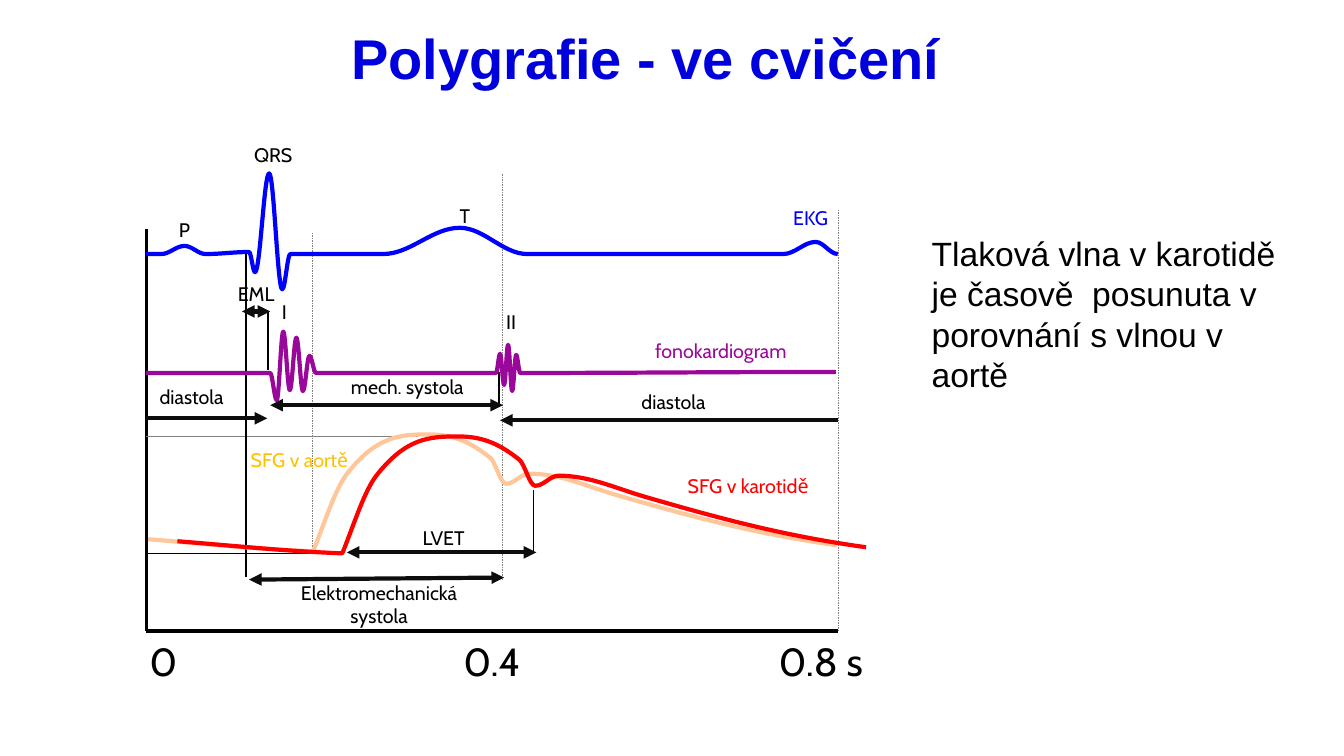
from itertools import accumulate, repeat

from lxml import etree
from pptx import Presentation, util as u
from pptx.dml.color import RGBColor
from pptx.enum import dml, shapes, text
from pptx.oxml.ns import qn

BLACK, ARROW, GREY = "000000", "0D0D0D", "808080"
BLUE, PURPLE, RED = "0000FF", "9A089A", "FF0000"
PEACH, GOLD, NAVY = "FFC799", "FFC000", "0000DC"

LEFT, RIGHT = 1.45, 8.31            # ends of the time axis
FLOOR = 6.26                        # height of the time axis
ECG_BASE, SOUND_BASE = 2.52, 3.7    # resting level of each trace
REACH = 0.36                        # share of a step covered by a curve handle
DELAY, DROP = 0.29, 0.02            # carotid pulse against aortic pulse


def paint(value):
    return RGBColor.from_string(value)


def put(item, values):
    for name, value in values.items():
        setattr(item, name, value)


def wave(start, top, end, rise):
    """Turning points of one rounded wave above the ECG base line."""
    return [(start, ECG_BASE), (top, ECG_BASE - rise), (end, ECG_BASE)]


def sound(start, step, swings):
    """Turning points of a heart sound: equal steps, one swing at each."""
    times = accumulate(repeat(step, len(swings)), initial=start)
    return [(x, SOUND_BASE + swing) for x, swing in zip(times, [0, *swings])]


def ecg():
    p_wave = wave(1.6, 1.83, 2.04, 0.08)
    q, r, s = (2.53, 2.7), (2.67, 1.72), (2.8, 2.87)
    t_wave = wave(3.8, 4.56, 5.23, 0.26)
    next_p = wave(7.77, 8.09, RIGHT, 0.12)
    return [(LEFT, ECG_BASE), *p_wave, (2.47, 2.5), q, r, s, (2.88, ECG_BASE),
            *t_wave, *next_p]


def phono():
    first = sound(2.68, 0.065, [0.27, -0.41, 0.17, -0.35, 0.18, -0.17, 0])
    second = sound(4.92, 0.04, [-0.19, 0.12, -0.28, 0.18, -0.18, 0])
    return [(LEFT, SOUND_BASE), *first, *second, (RIGHT - 0.02, SOUND_BASE - 0.01)]


def pulse(dx=0, dy=0):
    """Points of a pressure pulse, as x, y and slope."""
    phases = {
        "diastole": (1.47, 5.35, 0.08),
        "foot": (3.1, 5.47, 0.04),
        "upstroke": (3.11, 5.46, -2.5),
        "rise": (3.45, 4.69, -1.25),
        "peak": (4.25, 4.31, 0),
        "fall": (4.86, 4.54, 0.8),
        "notch": (5.02, 4.8, 0),
        "rebound": (5.25, 4.7, 0),
        "runoff": (6.11, 4.91, 0.29),
        "end": (8.3, 5.41, 0.14),
    }
    return [(x + dx, y + dy, slope) for x, y, slope in phases.values()]


class Chart:
    def __init__(self, slide):
        self.slide = slide
        self.font = "Cabin"

    def stroke(self, line, color, width):
        line.color.rgb = paint(color)
        line.width = u.Pt(width)

    def rule(self, x1, y1, x2, y2, color=BLACK, width=1.0, dash=False, ends=()):
        rule = self.slide.shapes.add_connector(
            shapes.MSO_CONNECTOR.STRAIGHT, *map(u.Inches, (x1, y1, x2, y2)))
        self.stroke(rule.line, color, width)
        if dash:
            rule.line.dash_style = dml.MSO_LINE.DASH
        props = rule._element.spPr
        for end in ends:
            etree.SubElement(props.find(qn("a:ln")), qn(f"a:{end}End"), type="triangle")
        etree.SubElement(props, qn("a:effectLst"))

    def arrow(self, x1, y1, x2, y2, ends=("head", "tail")):
        self.rule(x1, y1, x2, y2, ARROW, 3, ends=ends)

    def curve(self, points, color):
        """Join points by smooth cubics; a point without a slope is level."""
        knots = [(*point, 0)[:3] for point in points]
        stops = []
        for (x1, y1, m1), (x2, y2, m2) in zip(knots, knots[1:]):
            reach = (x2 - x1) * REACH
            stops += [(x1 + reach, y1 + m1 * reach),
                      (x2 - reach, y2 - m2 * reach), (x2, y2)]
        mils = [(x * 1000, y * 1000) for x, y in [knots[0][:2], *stops]]
        form = self.slide.shapes.build_freeform(*mils[0], scale=u.Inches(1) / 1000)
        form.add_line_segments(mils[1:], close=False)
        trace = form.convert_to_shape()
        trace.shadow.inherit = False
        trace.fill.background()
        self.stroke(trace.line, color, 3)
        self.bend(trace._element.find(".//" + qn("a:path")))

    def bend(self, track):
        """Turn each three straight steps into one cubic."""
        steps = track.findall(qn("a:lnTo"))
        for i in range(0, len(steps), 3):
            cubic = etree.SubElement(track, qn("a:cubicBezTo"))
            for step in steps[i:i + 3]:
                cubic.append(step[0])
                track.remove(step)

    def label(self, words, mid, top, color=BLACK, width=0.92, size=14, height=0.34):
        """Write words centred on mid."""
        area = (mid - width / 2, top, width, height)
        box = self.slide.shapes.add_textbox(*map(u.Inches, area))
        put(box.text_frame, {"word_wrap": True, "text": words,
                             "auto_size": text.MSO_AUTO_SIZE.SHAPE_TO_FIT_TEXT})
        para = box.text_frame.paragraphs[0]
        para.alignment = text.PP_ALIGN.CENTER
        put(para.font, {"name": self.font, "size": u.Pt(size)})
        para.font.color.rgb = paint(color)

    def holder(self, item, words, area, color, font, layout):
        """Move, fill and format a template placeholder."""
        put(item, dict(zip(("left", "top", "width", "height"), map(u.Inches, area))))
        frame = item.text_frame
        put(frame, {"text": words, "word_wrap": True,
                    "vertical_anchor": text.MSO_ANCHOR.TOP,
                    "auto_size": text.MSO_AUTO_SIZE.NONE})
        put(frame, {f"margin_{side}": 0 for side in ("left", "top", "right", "bottom")})
        para = frame.paragraphs[0]
        put(para, layout)
        put(para.font, {"name": "Arial", **font})
        para.font.color.rgb = paint(color)
        return para


def write(chart):
    """Fill the title and the remark beside the chart."""
    slide = chart.slide
    chart.holder(slide.shapes.title, "Polygrafie - ve cvičení",
                 (0.52, 0.34, 11.76, 0.49), NAVY, {"size": u.Pt(40), "bold": True},
                 {"alignment": text.PP_ALIGN.CENTER, "line_spacing": u.Pt(40)})
    para = chart.holder(
        slide.placeholders[1],
        "Tlaková vlna v karotidě je časově  posunuta v porovnání s vlnou v aortě",
        (9.16, 2.31, 3.63, 1.87), BLACK, {"size": u.Pt(24)},
        {"space_before": u.Pt(0), "line_spacing": u.Pt(28.8)})
    props = para._p.get_or_add_pPr()
    put_left = {"marL": u.Inches(0.08), "indent": 0}
    for name, value in put_left.items():
        props.set(name, str(value))
    props.find(qn("a:spcBef")).addnext(etree.Element(qn("a:buNone")))


def frame(chart):
    """Draw the axes, the time marks and the guide lines."""
    chart.rule(LEFT, FLOOR, RIGHT, FLOOR, width=3)
    chart.rule(LEFT, 2.27, LEFT, FLOOR, width=2.25)
    for i, mark in enumerate(("0", "0.4", "0.8 s")):
        chart.label(mark, 1.62 + 3.26 * i, 6.27, width=1.28, size=28, height=0.57)
    chart.rule(LEFT, 5.49, 3.1, 5.49, width=0.25)
    chart.rule(LEFT, 4.33, 4.15, 4.33, GREY, 0.25)
    for x, top, low in (3.1, 2.31, 5.46), (4.98, 1.73, 5.75), (RIGHT, 2.08, FLOOR):
        chart.rule(x, top, x, low, GREY, 0.25, dash=True)
    for x, top, low in ((2.44, 2.49, 5.72), (2.66, 3.09, 3.67),
                        (5.29, 4.86, 5.49), (4.95, 3.69, 4.04)):
        chart.rule(x, top, x, low)


def main():
    deck = Presentation()
    put(deck, {"slide_width": u.Inches(13.33), "slide_height": u.Inches(7.5)})
    chart = Chart(deck.slides.add_slide(deck.slide_layouts[1]))
    write(chart)
    frame(chart)

    for points, color in ((ecg(), BLUE), (phono(), PURPLE), (pulse(), PEACH),
                          (pulse(DELAY, DROP), RED)):
        chart.curve(points, color)

    for x1, x2, y in (2.4, 2.68, 3.09), (3.44, 5.32, 5.48), (2.68, 4.99, 4.02):
        chart.arrow(x1, y, x2, y)
    chart.arrow(2.47, 5.75, 5, 5.73)
    chart.arrow(4.96, 4.17, RIGHT, 4.17, ["head"])
    chart.arrow(LEFT, 4.15, 2.65, 4.15, ["tail"])

    for words, mid, top in (("P", 1.83, 2.11), ("QRS", 2.71, 1.37), ("T", 4.61, 1.97),
                            ("I", 2.82, 2.93), ("II", 5.07, 3.03), ("EML", 2.54, 2.75),
                            ("LVET", 4.4, 5.17), ("diastola", 1.9, 3.77),
                            ("diastola", 6.68, 3.82)):
        chart.label(words, mid, top)
    chart.label("mech. systola", 4.04, 3.67, width=1.43)
    chart.label("Elektromechanická systola", 3.76, 5.71, width=2.04, height=0.57)
    chart.label("EKG", 8.04, 1.99, BLUE)
    for words, mid, top, color in (("fonokardiogram", 7.15, 3.31, PURPLE),
                                   ("SFG v karotidě", 7.42, 4.65, RED),
                                   ("SFG v aortě", 2.97, 4.39, GOLD)):
        chart.label(words, mid, top, color, 2.84)

    deck.save("out.pptx")


if __name__ == "__main__":
    main()
